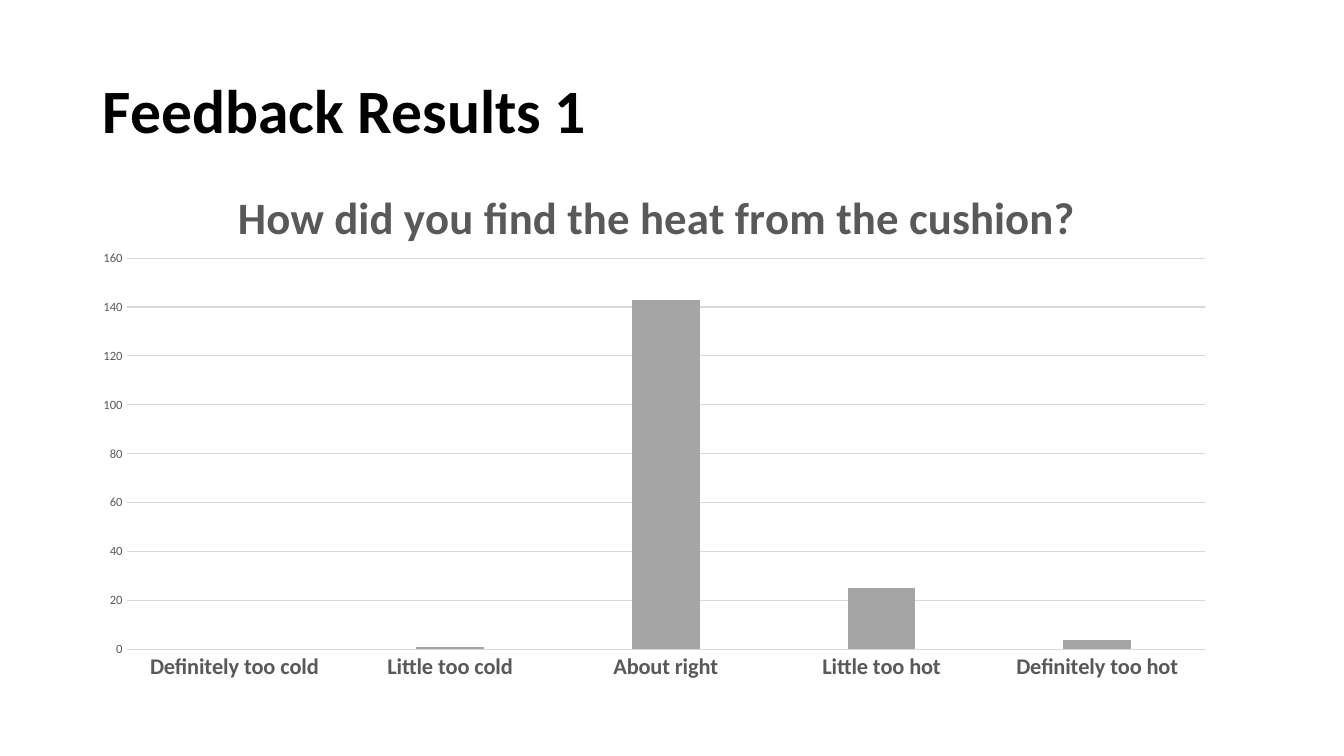
from dataclasses import dataclass

from lxml.etree import SubElement
from pptx import Presentation
from pptx.chart.data import CategoryChartData
from pptx.dml.color import RGBColor
from pptx.enum.chart import XL_CHART_TYPE as ChartType, XL_TICK_MARK as TickMark
from pptx.enum.text import MSO_ANCHOR as Anchor, PP_ALIGN as Align
from pptx.oxml import parse_xml
from pptx.oxml.ns import nsdecls, qn
from pptx.util import Inches, Pt


@dataclass(frozen=True)
class Theme:
    font: str = "Calibri"
    ink: RGBColor = RGBColor.from_string("000000")
    label: RGBColor = RGBColor.from_string("595959")
    rule: RGBColor = RGBColor.from_string("D9D9D9")
    bar: RGBColor = RGBColor.from_string("A5A5A5")
    title_size: int = 44
    question_size: int = 32
    category_size: int = 16
    value_size: int = 9
    chart_size: int = 10


theme = Theme()


def style(font, size, color, bold=False):
    font.name = theme.font
    font.size = Pt(size)
    font.color.rgb = color
    font.bold = bold


def place(parent, index, target=None, **fractions):
    """Pin a chart part by fractions of the chart's size."""
    for old in parent.findall(qn("c:layout")):
        parent.remove(old)
    layout = parse_xml(f"<c:layout {nsdecls('c')}><c:manualLayout/></c:layout>")
    manual = layout[0]
    if target:
        SubElement(manual, qn("c:layoutTarget"), val=target)
    for mode in ("xMode", "yMode"):
        SubElement(manual, qn(f"c:{mode}"), val="edge")
    for name, fraction in fractions.items():
        SubElement(manual, qn(f"c:{name}"), val=str(fraction))
    parent.insert(index, layout)


deck = Presentation()
deck.slide_width, deck.slide_height = Inches(13.33), Inches(7.5)
page = deck.slides.add_slide(deck.slide_layouts[5])

# Slide title
heading = page.shapes.title
heading.left, heading.top = Inches(0.92), Inches(0.4)
heading.width, heading.height = Inches(11.5), Inches(1.45)
heading.text_frame.vertical_anchor = Anchor.MIDDLE
para = heading.text_frame.paragraphs[0]
para.alignment = Align.LEFT
para.line_spacing = 0.9
span = para.add_run()
span.text = "Feedback Results 1"
style(span.font, theme.title_size, theme.ink, bold=True)

# Survey answers
answers = {
    "Definitely too cold": 0,
    "Little too cold": 1,
    "About right": 143,
    "Little too hot": 25,
    "Definitely too hot": 4,
}
data = CategoryChartData()
data.categories = list(answers)
data.add_series("Series 1", list(answers.values()))
chart = page.shapes.add_chart(
    ChartType.COLUMN_CLUSTERED,
    Inches(0.8), Inches(1.55), Inches(11.38), Inches(5.32), data,
).chart
style(chart.font, theme.chart_size, theme.ink)
chart.has_legend = False

# Chart title
chart.has_title = True
para = chart.chart_title.text_frame.paragraphs[0]
span = para.add_run()
span.text = "How did you find the heat from the cushion?"
style(span.font, theme.question_size, theme.label, bold=True)
place(chart.element.find(f".//{qn('c:title')}"), 1, x=0.13, y=0.04)

# Columns
plot = chart.plots[0]
plot.gap_width, plot.overlap = 219, -27
plot.vary_by_categories = False
columns = plot.series[0].format.fill
columns.solid()
columns.fore_color.rgb = theme.bar
place(chart.element.find(f".//{qn('c:plotArea')}"), 0, target="inner",
      x=0.04, y=0.19, w=0.94, h=0.73)

# Axes
answer_axis, count_axis = chart.category_axis, chart.value_axis
for axis in (answer_axis, count_axis):
    axis.major_tick_mark = axis.minor_tick_mark = TickMark.NONE
style(answer_axis.tick_labels.font, theme.category_size, theme.label, bold=True)
style(count_axis.tick_labels.font, theme.value_size, theme.label)
count_axis.minimum_scale, count_axis.maximum_scale = 0, 160
count_axis.major_unit = 20
count_axis.has_major_gridlines = True
for line in (answer_axis.format.line, count_axis.major_gridlines.format.line):
    line.color.rgb = theme.rule
    line.width = Pt(0.75)
count_axis.format.line.fill.background()

deck.save("out.pptx")
